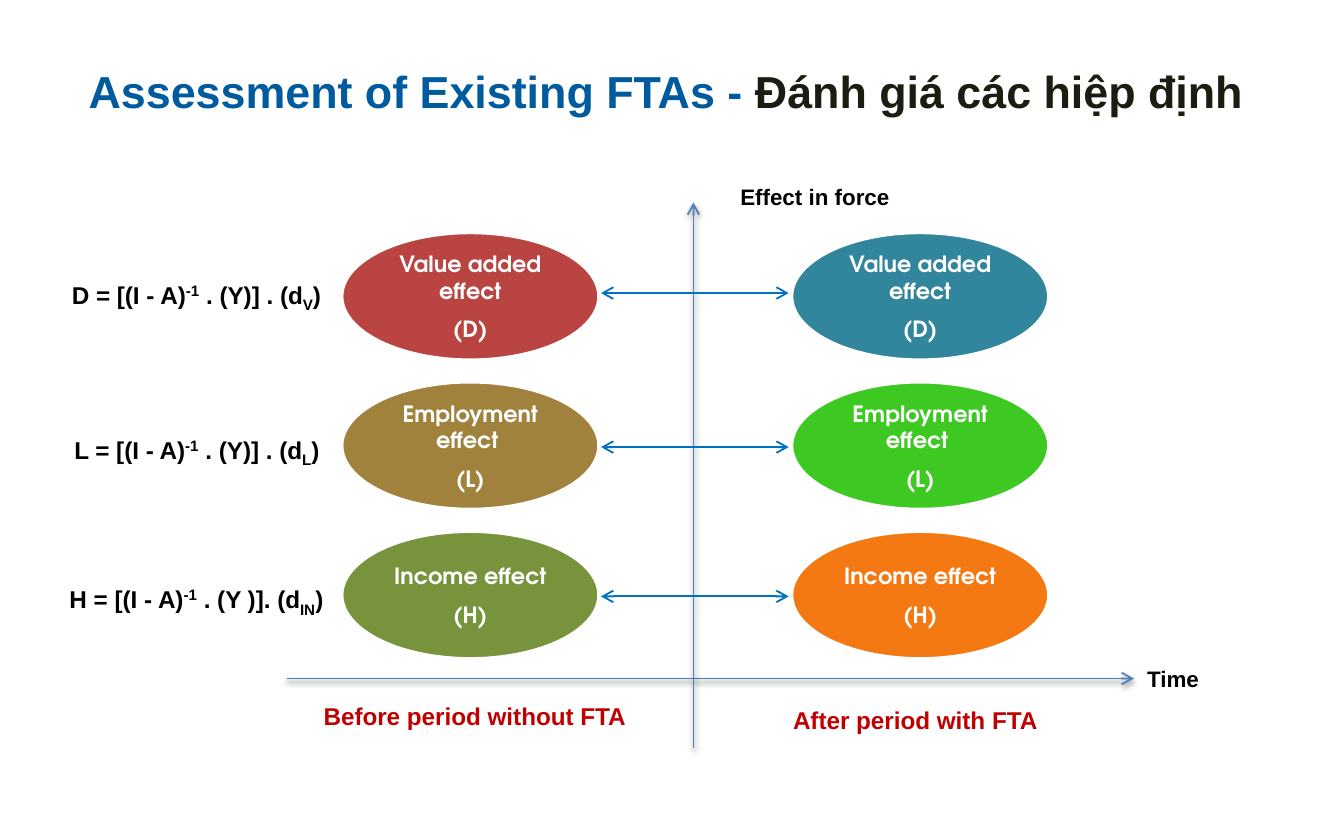
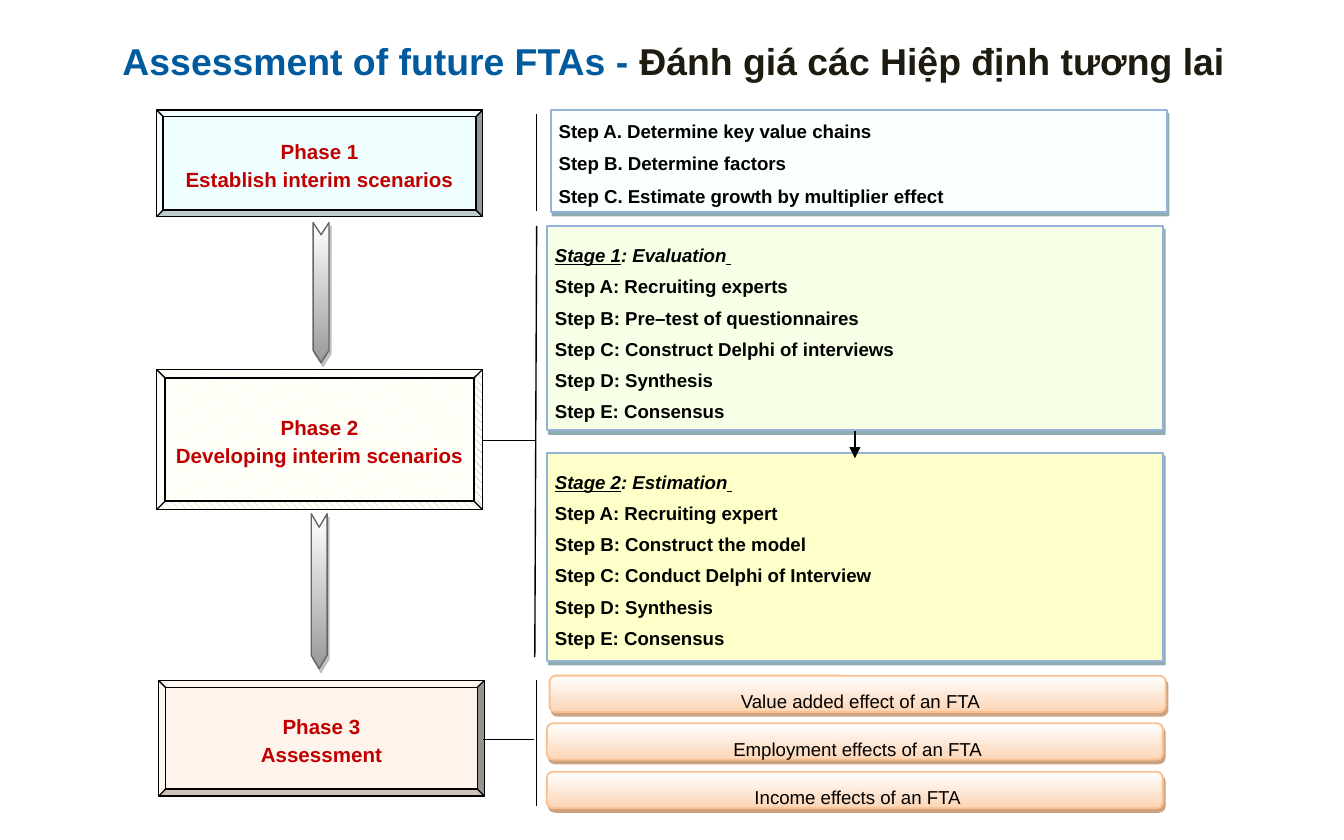
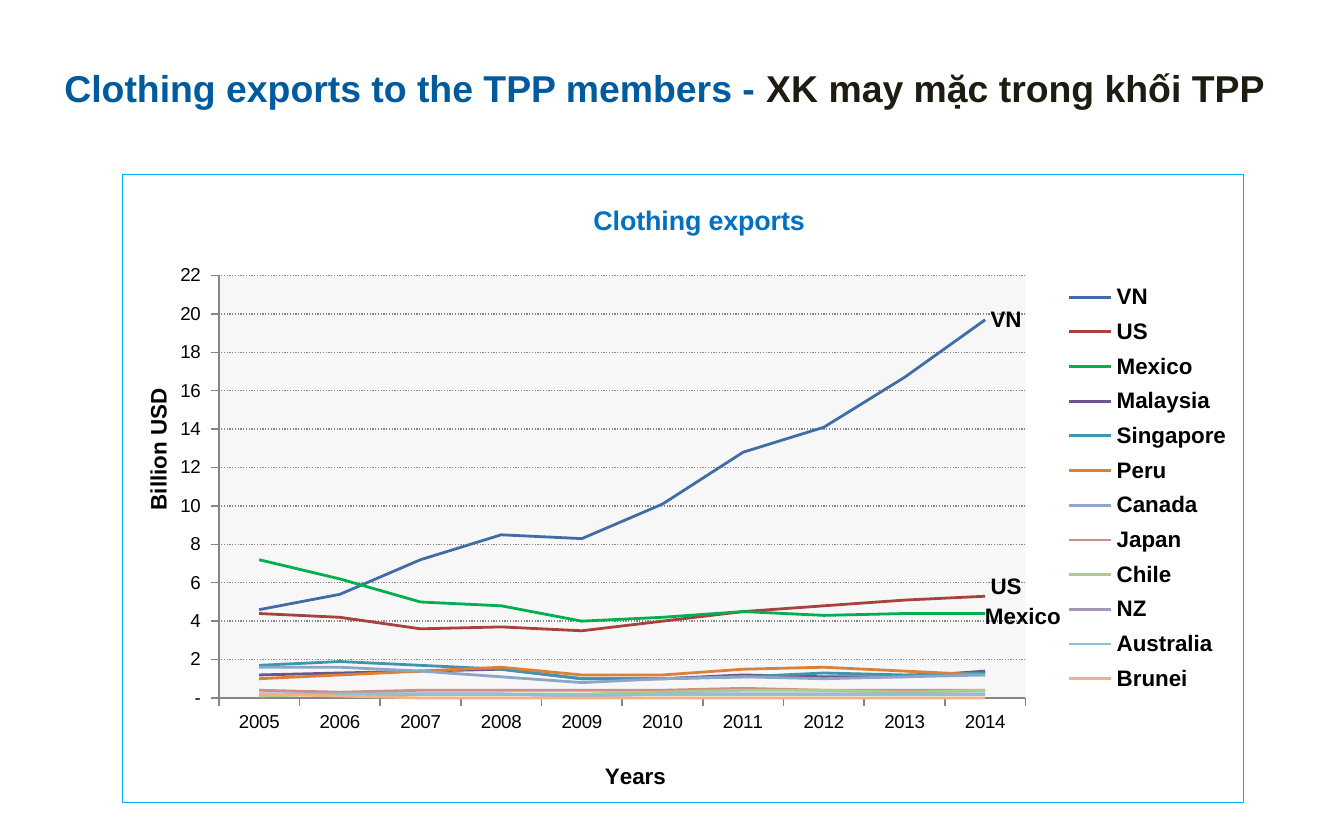
from pptx import Presentation
from pptx.chart.data import CategoryChartData as ChartData
from pptx.dml.color import RGBColor
from pptx.enum.chart import XL_CHART_TYPE as CHART, XL_LABEL_POSITION as SPOT
from pptx.enum.chart import XL_LEGEND_POSITION as SIDE, XL_TICK_MARK as TICK
from pptx.enum.dml import MSO_LINE as DASH, MSO_PATTERN as PATTERN
from pptx.enum.shapes import MSO_CONNECTOR as LINK, MSO_SHAPE as SHAPE
from pptx.enum.text import MSO_ANCHOR as ANCHOR, MSO_AUTO_SIZE as FIT, PP_ALIGN as ALIGN
from pptx.oxml import parse_xml
from pptx.oxml.ns import nsdecls, qn
from pptx.util import Pt

# Shared look
rgb = RGBColor.from_string
BLUE, DARK, RED, BLACK, WHITE = "005A9E", "1E1C11", "C00000", "000000", "FFFFFF"
SHADE = (f'<a:effectLst {nsdecls("a")}><a:outerShdw blurRad="%d" dist="%d" dir="%d" '
         'rotWithShape="0"><a:srgbClr val="%s"><a:alpha val="%d"/></a:srgbClr>'
         '</a:outerShdw></a:effectLst>')


def write(shape, text, size, hue, align=ALIGN.CENTER, bold=True, name="Arial"):
    """Fill a shape with text; a new line starts a paragraph, a bar starts a run."""
    frame = shape.text_frame
    frame.word_wrap = True
    frame.text = text
    for para in frame.paragraphs:
        para.alignment = align
        first, *rest = para.text.split("|")
        para.text = first
        for part in rest:
            para.add_run().text = part
        for run in para.runs:
            font = run.font
            font.name, font.size, font.bold = name, Pt(size), bold
            font.color.rgb = rgb(hue)
    return frame


def draw(slide, ends, hue=BLACK, width=0.75, head="none", tail="none", shade=False):
    """Draw a line with optional arrowheads and a soft shadow."""
    line = slide.shapes.add_connector(LINK.STRAIGHT, *map(Pt, ends))
    line.line.color.rgb = rgb(hue)
    line.line.width = Pt(width)
    ln = line.line._get_or_add_ln()
    for tag, kind in (("headEnd", head), ("tailEnd", tail)):
        ln.append(parse_xml(f'<a:{tag} {nsdecls("a")} type="{kind}"/>'))
    glow = SHADE % (Pt(3.1), Pt(1.6), 90 * 60000, BLACK, 38000)
    line.element.spPr.append(parse_xml(glow if shade else f'<a:effectLst {nsdecls("a")}/>'))


# Slides and titles
deck = Presentation()
deck.slide_width, deck.slide_height = Pt(720), Pt(450)
slides = []
for text, size, box in (
        ("Assessment of Existing FTAs - |Đánh giá các hiệp định ", 24, (36, 22.5, 648, 52)),
        ("Assessment of future FTAs - |Đánh giá các Hiệp định tương lai", 20,
         (21.5, 16.5, 679, 31.5)),
        ("Clothing exports to the TPP members - |XK may mặc trong khối TPP ", 20,
         (13.5, 31, 690.5, 31.5))):
    slide = deck.slides.add_slide(deck.slide_layouts[5])
    title = slide.shapes.title
    title.left, title.top, title.width, title.height = map(Pt, box)
    frame = write(title, text, size, BLUE)
    frame.auto_size, frame.vertical_anchor = FIT.NONE, ANCHOR.MIDDLE
    frame.paragraphs[0].runs[1].font.color.rgb = rgb(DARK)
    slides.append(slide)
effects, phases, exports = slides

# Slide 1: axes and their labels
for ends in ((153.5, 363.5, 607.5, 363.5), (371.5, 400.5, 371.5, 108.5)):
    draw(effects, ends, "4F81BD", 1, tail="arrow", shade=True)
for text, size, hue, align, box in (
        ("Time", 12, BLACK, ALIGN.LEFT, (607.5, 353, 72, 21.5)),
        ("Effect in force", 12, BLACK, ALIGN.LEFT, (389.5, 94.5, 96.5, 21.5)),
        ("Before period without FTA", 13, RED, ALIGN.CENTER, (153.5, 372, 201.5, 23)),
        ("After period with FTA", 13, RED, ALIGN.CENTER, (389.5, 374.5, 201.5, 23))):
    write(effects.shapes.add_textbox(*map(Pt, box)), text, size, hue, align)

# Slide 1: one row per effect, with formula, two ovals and a link
rows = (
    ("Value added effect\n(D)", "B94441", "31859C", 157,
     "D = [(I - A)|-1| . (Y)] . (d|V|)", (29, 145.5, 152.5, 23)),
    ("Employment effect \n(L)", "A1823D", "3DC921", 239.5,
     "L = [(I - A)|-1| . (Y)] . (d|L|)", (31, 228.5, 149, 23)),
    ("Income effect\n(H)", "77933C", "F57913", 319.5,
     "H = [(I - A)|-1| . (Y )]. (d|IN|)", (26.5, 308.5, 157.5, 23)))
for row, (text, before, after, y, rule, box) in enumerate(rows):
    draw(effects, (322, y, 422.5, y), "0070C0", 1, "arrow", "arrow")
    for x, hue in ((183, before), (424, after)):
        oval = effects.shapes.add_shape(SHAPE.OVAL, Pt(x), Pt(124.5 + 80 * row),
                                        Pt(138), Pt(68.5))
        oval.shadow.inherit = False
        oval.fill.solid()
        oval.fill.fore_color.rgb = rgb(hue)
        oval.line.color.rgb = rgb(WHITE)
        oval.line.width = Pt(2)
        frame = write(oval, text, 12, WHITE, name="TeX Gyre Adventor")
        frame.vertical_anchor = ANCHOR.MIDDLE
        frame.margin_left = frame.margin_right = Pt(3.6)
        for para in frame.paragraphs:
            para.space_after = Pt(6)
    frame = write(effects.shapes.add_textbox(*map(Pt, box)), rule, 13, BLACK)
    frame.word_wrap = False
    runs = frame.paragraphs[0].runs
    for run, shift in ((runs[1], 30000), (runs[3], -25000)):
        run.font.size = Pt(14)
        run._r.get_or_add_rPr().set("baseline", str(shift))

# Slide 2: phases
for text, hue, box in (
        ("Phase 1\nEstablish interim scenarios", "EFFFFF", (84, 59, 174.5, 57)),
        ("Phase 2\nDeveloping interim scenarios", None, (84, 198, 174.5, 75)),
        ("Phase 3\nAssessment", "FEF4EC", (85, 364.5, 174.5, 62))):
    bevel = phases.shapes.add_shape(SHAPE.BEVEL, *map(Pt, box))
    bevel.adjustments[0] = 0.06
    bevel.shadow.inherit = False
    if hue:
        bevel.fill.solid()
        bevel.fill.fore_color.rgb = rgb(hue)
    else:
        bevel.fill.patterned()
        bevel.fill.pattern = PATTERN.WIDE_DOWNWARD_DIAGONAL
        bevel.fill.fore_color.rgb = rgb("FFFF99")
        bevel.fill.back_color.rgb = rgb(WHITE)
    bevel.line.color.rgb = rgb(BLACK)
    bevel.line.width = Pt(0.75)
    frame = write(bevel, text, 11, RED)
    frame.vertical_anchor = ANCHOR.MIDDLE
    frame.margin_left = frame.margin_right = Pt(1.5)
    frame.margin_top = frame.margin_bottom = Pt(0.7)
    for para in frame.paragraphs:
        para.line_spacing = 1.15

# Slide 2: chevrons, step boxes and results, all with a hard shadow
STEPS, RESULT, ARROW = SHAPE.FLOWCHART_PROCESS, SHAPE.FLOWCHART_ALTERNATE_PROCESS, SHAPE.CHEVRON
looks = {STEPS: ("95B3D7", 1, "215968"), RESULT: ("FAC090", 1, "984807"),
         ARROW: ("666666", 0.75, "808080")}
for kind, box, fill, text in (
        (ARROW, (134.5, 152.5, 75, 8.5), 0.77, ""),
        (ARROW, (129.5, 312.5, 83, 8.5), 0.85, ""),
        (STEPS, (295, 59, 330, 54.5), "FBFFFF",
         "Step A. Determine key value chains\nStep B. Determine factors\n"
         "Step C. Estimate growth by multiplier| |effect"),
        (STEPS, (293, 121, 330, 109.5), "F7FFE7",
         "Stage 1|: Evaluation| \nStep A: Recruiting experts\n"
         "Step B: Pre–test of questionnaires\nStep C: Construct Delphi of interviews\n"
         "Step D: Synthesis\nStep E: Consensus"),
        (STEPS, (293, 242.5, 330, 111.5), "FFFFC9",
         "Stage 2|: Estimation| \nStep A: Recruiting expert\n"
         "Step B: Construct the model\nStep C: Conduct Delphi of Interview\n"
         "Step D: Synthesis\nStep E: Consensus"),
        (RESULT, (294.5, 362, 330, 19.5), "FCD5B5", "Value added effect of an FTA"),
        (RESULT, (293, 387.5, 330, 19.5), "FCD5B5", "Employment effects of an FTA"),
        (RESULT, (293, 413.5, 330, 19.5), "FCD5B5", "Income effects of an FTA")):
    shape = phases.shapes.add_shape(kind, *map(Pt, box))
    edge, width, dark = looks[kind]
    shape.line.color.rgb = rgb(edge)
    shape.line.width = Pt(width)
    if kind == STEPS:
        shape.fill.solid()
        shape.fill.fore_color.rgb = rgb(fill)
    else:
        shape.fill.gradient()
        shape.fill.gradient_angle = 0 if kind == ARROW else 270
        low, high = shape.fill.gradient_stops
        low.color.rgb = rgb(WHITE)
        high.color.rgb = rgb("999999" if kind == ARROW else fill)
    shape.element.spPr.append(parse_xml(SHADE % (0, Pt(2.2), 63 * 60000, dark, 50000)))
    if kind == ARROW:
        shape.rotation = 90
        shape.adjustments[0] = fill
        continue
    steps = kind == STEPS
    frame = write(shape, text, 10, BLACK, ALIGN.LEFT if steps else ALIGN.CENTER, steps)
    frame.vertical_anchor = ANCHOR.TOP
    frame.margin_left, frame.margin_right = Pt(4.3), Pt(1.5)
    frame.margin_top, frame.margin_bottom = Pt(3.7 if steps else 0.7), Pt(0.7)
    for i, para in enumerate(frame.paragraphs):
        para.line_spacing = 1.14 if steps else 1.5
        if i:
            para.space_before = Pt(3)
    if text.startswith("Stage"):
        head = frame.paragraphs[0]
        head.line_spacing = 1.5
        for run, under in zip(head.runs, (True, False, True)):
            run.font.italic, run.font.underline = True, under
    elif steps:
        frame.paragraphs[2].runs[1].font.size = Pt(11)

# Slide 2: rules and links
for ends in ((287.5, 61, 287.5, 113), (259, 236, 286.5, 236), (287.5, 121, 286.5, 352),
             (258.5, 396, 286, 396), (287.5, 364.5, 287.5, 432)):
    draw(phases, ends)
draw(phases, (458, 231, 458, 245.5), tail="triangle")

# Slide 3: chart data
lines = (
    ("VN", "406DA6", (4.6, 5.4, 7.2, 8.5, 8.3, 10.1, 12.8, 14.1, 16.7, 19.7)),
    ("US", "A8423F", (4.4, 4.2, 3.6, 3.7, 3.5, 4, 4.5, 4.8, 5.1, 5.3)),
    ("Mexico", "00B050", (7.2, 6.2, 5, 4.8, 4, 4.2, 4.5, 4.3, 4.4, 4.4)),
    ("Malaysia", "6E548D", (1.2, 1.3, 1.4, 1.5, 1, 1, 1.2, 1.1, 1.1, 1.4)),
    ("Singapore", "3D96AE", (1.7, 1.9, 1.7, 1.5, 1, 1, 1.1, 1.3, 1.2, 1.3)),
    ("Peru", "DA8137", (1, 1.2, 1.4, 1.6, 1.2, 1.2, 1.5, 1.6, 1.4, 1.2)),
    ("Canada", "8EA5CB", (1.6, 1.6, 1.4, 1.1, 0.8, 1, 1.1, 1, 1.1, 1.2)),
    ("Japan", "CE8E8D", (0.4, 0.3, 0.4, 0.4, 0.4, 0.4, 0.5, 0.4, 0.4, 0.4)),
    ("Chile", "B0CA88", (0.1, 0.2, 0.2, 0.2, 0.2, 0.3, 0.4, 0.4, 0.3, 0.4)),
    ("NZ", "A597B7", (0.2, 0.2, 0.2, 0.2, 0.1, 0.2, 0.2, 0.2, 0.2, 0.2)),
    ("Australia", "8DC1D3", (0.2, 0.2, 0.2, 0.2, 0.1, 0.2, 0.2, 0.2, 0.2, 0.2)),
    ("Brunei", "F7AF85", (0.2, 0.1, 0, 0, 0, 0, 0, 0, 0, 0)))
data = ChartData(number_format="0.0")
data.categories = [str(year) for year in range(2005, 2015)]
for name, hue, vals in lines:
    data.add_series(name, vals)
chart = exports.shapes.add_chart(CHART.LINE, Pt(65.5), Pt(93), Pt(600.5), Pt(337), data).chart
chart.font.name, chart.font.size = "Arial", Pt(12)
chart.font.color.rgb = rgb(BLACK)
plot = chart.plots[0]
plot.vary_by_categories = False

# Slide 3: series and the labels at the line ends
for series, (name, hue, vals) in zip(plot.series, lines):
    series.smooth = False
    series.format.line.color.rgb = rgb(hue)
    series.format.line.width = Pt(1.5)
    if name in ("VN", "US", "Mexico"):
        label = series.points[9].data_label
        label.position = SPOT.RIGHT
        label.font.size, label.font.bold = Pt(12), True
root = chart.element
for tag, val in (("showVal", "0"), ("showSerName", "1")):
    for flag in root.xpath(f"//c:dLbl/c:{tag}"):
        flag.set("val", val)

# Slide 3: titles, axes and legend
axes = chart.category_axis, chart.value_axis
for owner, text, size, hue in ((chart.chart_title, "Clothing exports", 14.4, "0070C0"),
                               (axes[0].axis_title, "Years", 12, BLACK),
                               (axes[1].axis_title, "Billion USD", 12, BLACK)):
    write(owner, text, size, hue)
for axis in axes:
    axis.major_tick_mark, axis.minor_tick_mark = TICK.OUTSIDE, TICK.NONE
    axis.tick_labels.font.size = Pt(10)
    axis.format.line.color.rgb = rgb("868686")
years, money = axes
money.minimum_scale, money.maximum_scale, money.major_unit = 0, 22, 2
money.tick_labels.number_format = '_(* #,##0_);_(* \\(#,##0\\);_(* "-"_);_(@_)'
money.tick_labels.number_format_is_linked = False
grid = money.major_gridlines.format.line
grid.color.rgb, grid.width, grid.dash_style = rgb("868686"), Pt(0.75), DASH.ROUND_DOT
chart.has_legend = True
chart.legend.position = SIDE.RIGHT
chart.legend.include_in_layout = False
chart.legend.font.size, chart.legend.font.bold = Pt(12), True

# Slide 3: places of the chart parts, as shares of the chart
ends = root.xpath("//c:dLbl")
for node, spot, place in (
        (root.xpath("//c:plotArea")[0], 0, {"x": 0.086, "y": 0.162, "w": 0.72, "h": 0.672}),
        (root.xpath("//c:legend")[0], 1, {"x": 0.84, "y": 0.16, "w": 0.15, "h": 0.68}),
        (root.xpath("//c:chart/c:title")[0], 1, {"x": 0.416, "y": 0.04}),
        (root.xpath("//c:catAx/c:title")[0], 1, {"x": 0.427, "y": 0.93}),
        (root.xpath("//c:valAx/c:title")[0], 1, {"x": 0.016, "y": 0.335}),
        (ends[1], 1, {"x": 0, "y": -0.015}),
        (ends[2], 1, {"x": -0.005, "y": 0.006})):
    for old in node.findall(qn("c:layout")):
        node.remove(old)
    inner = '<c:layoutTarget val="inner"/>' if spot == 0 else ""
    modes = "" if node in ends else '<c:xMode val="edge"/><c:yMode val="edge"/>'
    sizes = "".join(f'<c:{key} val="{val}"/>' for key, val in place.items())
    node.insert(spot, parse_xml(f'<c:layout {nsdecls("c")}><c:manualLayout>{inner}{modes}{sizes}'
                                '</c:manualLayout></c:layout>'))

# Slide 3: plot fill and chart border
PAINT = (f'<c:spPr {nsdecls("c", "a")}><a:solidFill><a:srgbClr val="%s"/></a:solidFill>'
         '<a:ln w="%d">%s</a:ln></c:spPr>')
root.xpath("//c:plotArea")[0].append(parse_xml(PAINT % ("F7F7F7", 0, "<a:noFill/>")))
border = '<a:solidFill><a:srgbClr val="00B0F0"/></a:solidFill>'
root.find(qn("c:chart")).addnext(parse_xml(PAINT % (WHITE, Pt(0.25), border)))

deck.save("out.pptx")
